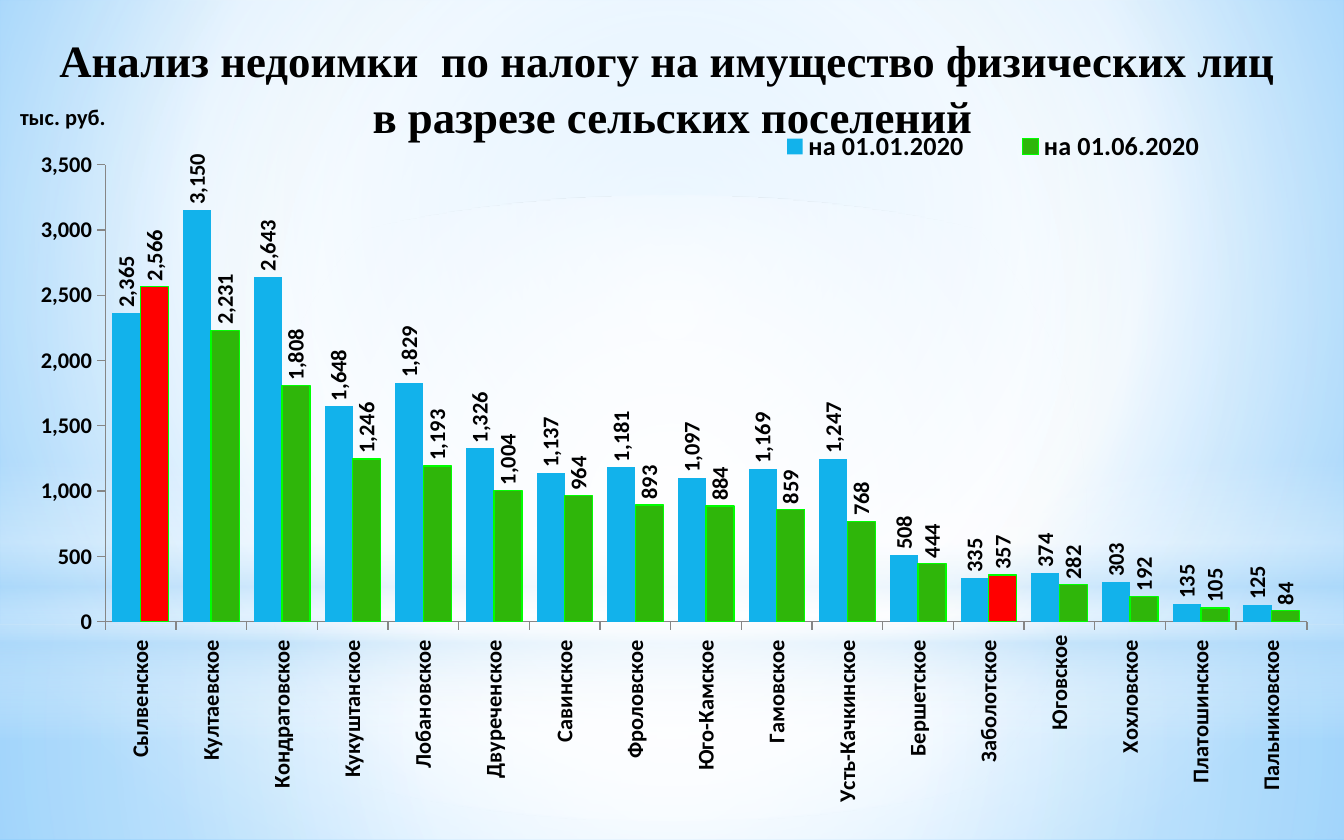
"""Build a slide charting property tax arrears by rural settlement."""
import pptx
import pptx.chart.data
import pptx.dml.color
import pptx.enum.chart
import pptx.enum.shapes
import pptx.enum.text
import pptx.oxml
import pptx.oxml.ns
import pptx.util

SCALE = 914400 / 134.4
THEME = {
    "text": "000000", "axis": "868686", "january": "12B2EB", "june": "2FB60A",
    "outline": "00FF00", "growth": "FF0000", "white": "FFFFFF", "haze": "B4DCFA",
    "sky": "9ED5FF", "deep": "5BB9FF",
    "title_font": "Times New Roman", "chart_font": "Calibri",
    "title_size": 24, "chart_size": 12, "legend_size": 14,
}
RGB = pptx.dml.color.RGBColor.from_string
CENTER = '<a:path path="circle"><a:fillToRect l="50000" t="50000" r="50000" b="50000"/></a:path>'


def paint_gradient(fill, element, stops, direction):
    fill.gradient()
    marks = "".join(
        f'<a:gs pos="{place * 1000}"><a:srgbClr val="{THEME[color]}">'
        f'<a:alpha val="{opacity * 1000}"/></a:srgbClr></a:gs>'
        for place, color, opacity in stops
    )
    gradient = pptx.oxml.parse_xml(
        f'<a:gradFill {pptx.oxml.ns.nsdecls("a")} rotWithShape="1">'
        f"<a:gsLst>{marks}</a:gsLst>{direction}</a:gradFill>"
    )
    previous = element.xpath(".//a:gradFill")[0]
    previous.getparent().replace(previous, gradient)


def place_layout(element, values, inner=False):
    target = '<c:layoutTarget val="inner"/>' if inner else ""
    modes = "".join(f'<c:{axis}Mode val="edge"/>' for axis in "xy")
    sizes = "".join(f'<c:{name} val="{value}"/>' for name, value in zip("xywh", values))
    layout = pptx.oxml.parse_xml(
        f'<c:layout {pptx.oxml.ns.nsdecls("c")}><c:manualLayout>'
        f"{target}{modes}{sizes}</c:manualLayout></c:layout>"
    )
    previous = element.find(pptx.oxml.ns.qn("c:layout"))
    if previous is None:
        element.insert(0, layout)
    else:
        element.replace(previous, layout)


deck = pptx.Presentation()
deck.slide_width, deck.slide_height = (round(side * SCALE) for side in (1344, 840))
page = deck.slides.add_slide(deck.slide_layouts[6])
paint_gradient(
    page.background.fill, page.element,
    [(0, "sky", 100), (60, "white", 100), (100, "deep", 100)],
    '<a:path path="circle"><a:fillToRect l="20000" t="10000" r="20000" b="60000"/></a:path>',
)

shapes = pptx.enum.shapes.MSO_SHAPE
washes = [
    (shapes.RECTANGLE, 625, 215, CENTER,
     [(0, "white", 91), (37, "white", 76), (100, "haze", 79)]),
    (shapes.RECTANGLE, 0, 625, CENTER,
     [(0, "white", 89), (48, "white", 62), (100, "haze", 79)]),
    (shapes.RECTANGLE, 461, 280, '<a:lin ang="5400000" scaled="0"/>',
     [(0, "white", 0), (29, "white", 30), (45, "haze", 40),
      (55, "white", 26), (65, "haze", 60), (100, "white", 0)]),
    (shapes.OVAL, 196, 625, CENTER, [(0, "white", 100), (56, "white", 0)]),
]
for kind, top, height, direction, stops in washes:
    wash = page.shapes.add_shape(
        kind, *(round(side * SCALE) for side in (0, top, 1344, height)))
    wash.shadow.inherit = False
    wash.line.fill.background()
    paint_gradient(wash.fill, wash.element, stops, direction)

box = page.shapes.add_textbox(*(round(side * SCALE) for side in (27, 23, 1291, 70)))
box.text_frame.word_wrap = True
para = box.text_frame.paragraphs[0]
para.text = "Анализ недоимки  по налогу на имущество физических лиц \vв разрезе сельских поселений"
para.alignment = pptx.enum.text.PP_ALIGN.CENTER
para.line_spacing = 1.05
title_format = {"name": THEME["title_font"], "size": pptx.util.Pt(THEME["title_size"]), "bold": True}
for span in para.runs:
    for name, value in title_format.items():
        setattr(span.font, name, value)
    span.font.color.rgb = RGB(THEME["text"])

data = pptx.chart.data.CategoryChartData(number_format="#,##0")
data.categories = [
    "Сылвенское ", "Култаевское ", "Кондратовское ", "Кукуштанское ", "Лобановское ",
    "Двуреченское ", "Савинское ", "Фроловское ", "Юго-Камское ", "Гамовское ",
    "Усть-Качкинское ", "Бершетское ", "Заболотское ", "Юговское", "Хохловское ",
    "Платошинское ", "Пальниковское ",
]
january = [2365, 3150, 2643, 1648, 1829, 1326, 1137, 1181, 1097,
           1169, 1247, 508, 335, 374, 303, 135, 125]
june = [2566, 2231, 1808, 1246, 1193, 1004, 964, 893, 884,
        859, 768, 444, 357, 282, 192, 105, 84]
data.add_series("на 01.01.2020", january)
data.add_series("на 01.06.2020", june)
chart = page.shapes.add_chart(
    pptx.enum.chart.XL_CHART_TYPE.COLUMN_CLUSTERED,
    *(round(side * SCALE) for side in (16, 67, 1312, 758)), data,
).chart
chart.has_title = False
chart_format = {"name": THEME["chart_font"], "size": pptx.util.Pt(THEME["chart_size"]), "bold": True}

chart.has_legend = True
chart.legend.position = pptx.enum.chart.XL_LEGEND_POSITION.BOTTOM
chart.legend.include_in_layout = False

plot = chart.plots[0]
plot.gap_width, plot.overlap, plot.vary_by_categories = 52, 0, False
for series, color in zip(plot.series, ("january", "june")):
    series.invert_if_negative = False
    series.format.fill.solid()
    series.format.fill.fore_color.rgb = RGB(THEME[color])
    labels = series.data_labels
    label_format = {
        "show_value": True, "number_format": "#,##0", "number_format_is_linked": False,
        "position": pptx.enum.chart.XL_LABEL_POSITION.OUTSIDE_END,
    }
    for name, value in label_format.items():
        setattr(labels, name, value)

current = plot.series[1]
grown = [index for index, (old, new) in enumerate(zip(january, june)) if new > old]
points = [current.points[index] for index in grown]
for point in points:
    point.format.fill.solid()
    point.format.fill.fore_color.rgb = RGB(THEME["growth"])
for bar in [current, *points]:
    bar.format.line.color.rgb = RGB(THEME["outline"])
    bar.format.line.width = pptx.util.Pt(0.75)

value_format = {
    "minimum_scale": 0, "maximum_scale": 3500, "major_unit": 500, "has_title": True,
}
for name, value in value_format.items():
    setattr(chart.value_axis, name, value)
chart.value_axis.tick_labels.number_format = "#,##0"
chart.value_axis.tick_labels.number_format_is_linked = False
for axis in (chart.category_axis, chart.value_axis):
    axis.has_major_gridlines = False
    axis.major_tick_mark = pptx.enum.chart.XL_TICK_MARK.OUTSIDE
    axis.format.line.color.rgb = RGB(THEME["axis"])

caption = chart.value_axis.axis_title.text_frame.paragraphs[0]
caption.text = "тыс. руб."
fonts = [chart.font, chart.legend.font, caption.runs[0].font,
         chart.category_axis.tick_labels.font, chart.value_axis.tick_labels.font]
for font in fonts + [series.data_labels.font for series in plot.series]:
    for name, value in chart_format.items():
        setattr(font, name, value)
    font.color.rgb = RGB(THEME["text"])
chart.legend.font.size = pptx.util.Pt(THEME["legend_size"])

rotations = {
    ".//c:ser/c:dLbls/c:txPr/a:bodyPr": -90,
    ".//c:catAx/c:txPr/a:bodyPr": -90,
    ".//c:valAx/c:title//a:bodyPr": 0,
}
for query, angle in rotations.items():
    for body in chart.element.xpath(query):
        body.set("rot", str(angle * 60000))
        body.set("vert", "horz")

place_layout(chart.element.xpath(".//c:plotArea")[0], (0.068, 0.129, 0.916, 0.603), inner=True)
place_layout(chart.element.xpath(".//c:legend")[0], (0.55, 0.08, 0.39, 0.05))
place_layout(chart.element.xpath(".//c:valAx/c:title")[0], (0, 0.04))

deck.save("out.pptx")
